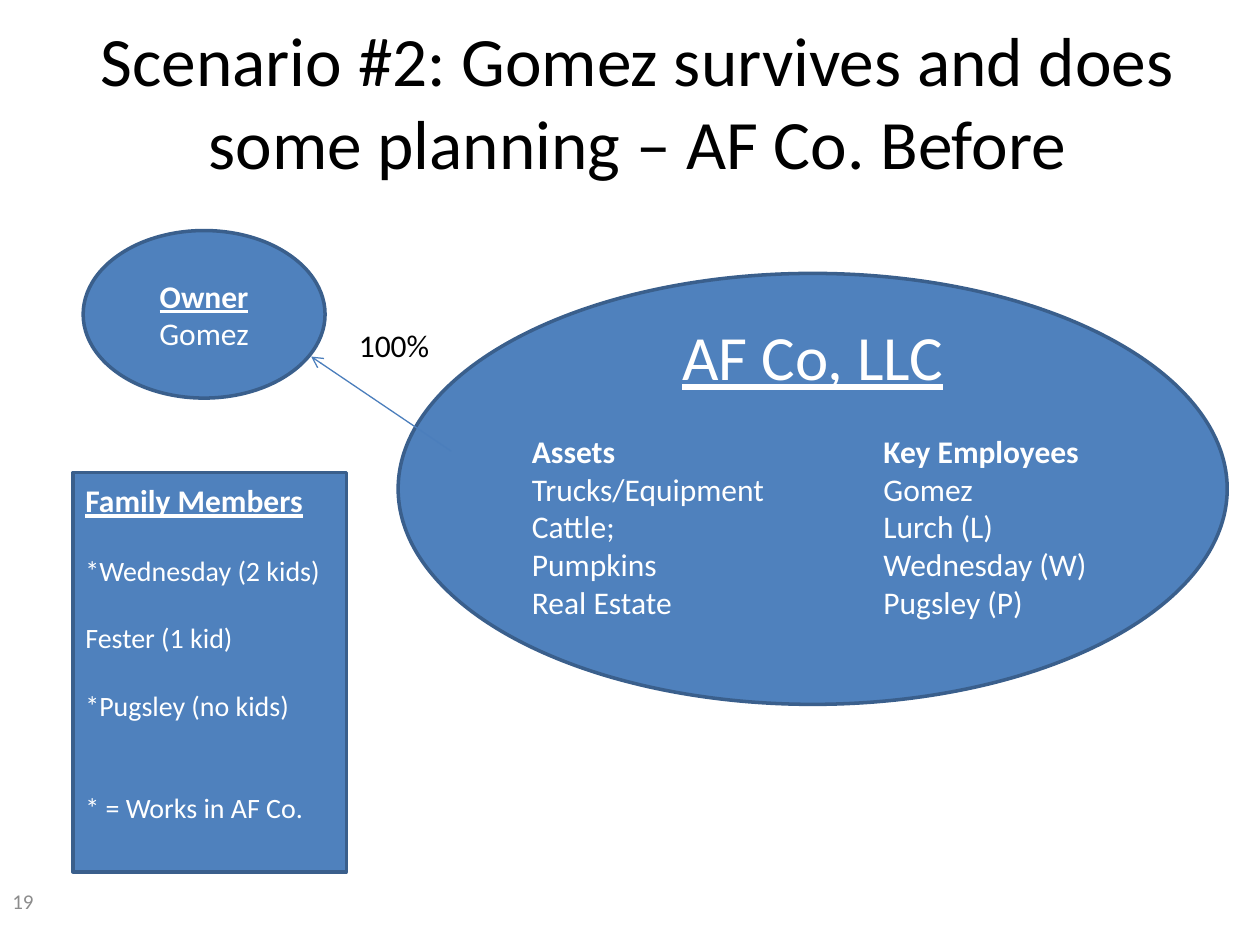
from lxml import etree
from pptx import Presentation
from pptx.dml.color import RGBColor
from pptx.enum.shapes import MSO_CONNECTOR, MSO_SHAPE
from pptx.enum.text import MSO_ANCHOR, MSO_AUTO_SIZE, PP_ALIGN
from pptx.oxml.ns import qn
from pptx.util import Inches, Pt

LEFT, CENTER = PP_ALIGN.LEFT, PP_ALIGN.CENTER
TOP, MIDDLE = MSO_ANCHOR.TOP, MSO_ANCHOR.MIDDLE
NO_FIT = MSO_AUTO_SIZE.NONE
OVAL, RECTANGLE = MSO_SHAPE.OVAL, MSO_SHAPE.RECTANGLE
STRAIGHT = MSO_CONNECTOR.STRAIGHT

WHITE = RGBColor(0xFF, 0xFF, 0xFF)
BLACK = RGBColor(0, 0, 0)
GRAY = RGBColor(0x8C, 0x8C, 0x8C)
BLUE = RGBColor(0x4F, 0x81, 0xBD)
OUTLINE = RGBColor(0x3A, 0x5F, 0x8C)
ARROW = RGBColor(0x4B, 0x7E, 0xBC)
FONT = "Calibri"


def add_text(tf, text, size=18, color=WHITE, bold=False, underline=False,
             align=LEFT, before=0, tab=None):
    p = tf.paragraphs[0]
    if p.runs:
        p = tf.add_paragraph()
    if tab is not None:
        tabs = etree.SubElement(p._p.get_or_add_pPr(), qn("a:tabLst"))
        etree.SubElement(tabs, qn("a:tab"), pos=str(tab), algn="l")
    p.alignment = align
    if before:
        p.space_before = Pt(before)
    r = p.add_run()
    r.text = text
    r.font.name = FONT
    r.font.size = Pt(size)
    r.font.bold = bold
    r.font.underline = underline
    r.font.color.rgb = color


def add_panel(s, kind, box, bottom=0.05):
    sp = s.shapes.add_shape(kind, *map(Inches, box))
    sp.shadow.inherit = False
    sp.fill.solid()
    sp.fill.fore_color.rgb = BLUE
    sp.line.color.rgb = OUTLINE
    sp.line.width = Pt(2)
    tf = sp.text_frame
    tf.word_wrap = True
    tf.vertical_anchor = MIDDLE
    tf.margin_bottom = Inches(bottom)
    return tf


def add_title(s, box):
    title = s.shapes.title
    title.left, title.top, title.width, title.height = map(Inches, box)
    tf = title.text_frame
    tf.auto_size = NO_FIT
    tf.vertical_anchor = MIDDLE
    add_text(tf, "Scenario #2: Gomez survives and does some planning – AF Co. Before",
             size=39.6, color=BLACK, align=CENTER)


def add_company(s, box):
    tf = add_panel(s, OVAL, box, bottom=0.36)
    add_text(tf, "AF Co, LLC", size=36, underline=True, align=CENTER)
    rows = [
        ("Assets", "Key Employees"),
        ("Trucks/Equipment", "Gomez"),
        ("Cattle;", "Lurch (L)"),
        ("Pumpkins", "Wednesday (W)"),
        ("Real Estate", "Pugsley (P)"),
    ]
    for i, row in enumerate(rows):
        add_text(tf, "\t".join(row), bold=i == 0, before=22 if i == 0 else 0,
                 tab=Inches(2.79))


def add_owner(s, box):
    tf = add_panel(s, OVAL, box)
    add_text(tf, "Owner", bold=True, underline=True, align=CENTER)
    add_text(tf, "Gomez", align=CENTER)


def add_family(s, box):
    tf = add_panel(s, RECTANGLE, box, bottom=0.36)
    add_text(tf, "Family Members", bold=True, underline=True)
    for member in ("*Wednesday (2 kids)", "Fester (1 kid)", "*Pugsley (no kids)"):
        add_text(tf, member, size=16, before=19.5)
    add_text(tf, "* = Works in AF Co.", size=16, before=39)


def add_ownership_arrow(s, start, end):
    line = s.shapes.add_connector(STRAIGHT, *map(Inches, start + end))
    line.line.color.rgb = ARROW
    line.line.width = Pt(0.75)
    etree.SubElement(line.line._get_or_add_ln(), qn("a:tailEnd"), type="arrow")
    etree.SubElement(line._element.spPr, qn("a:effectLst"))


def add_label(s, box, text, anchor=TOP, **text_format):
    tf = s.shapes.add_textbox(*map(Inches, box)).text_frame
    tf.word_wrap = True
    tf.vertical_anchor = anchor
    add_text(tf, text, **text_format)


def main():
    prs = Presentation()
    prs.slide_width, prs.slide_height = Inches(10), Inches(7.5)
    s = prs.slides.add_slide(prs.slide_layouts[5])
    add_title(s, (0.56, 0.17, 9, 1.25))
    add_company(s, (3.16, 2.17, 6.58, 3.42))
    add_owner(s, (0.66, 1.83, 1.92, 1.33))
    add_ownership_arrow(s, (3.58, 3.58), (2.47, 2.83))
    add_label(s, (2.75, 2.54, 1, 0.4), "100%", color=BLACK)
    add_family(s, (0.58, 3.75, 2.17, 3.17))
    add_label(s, (0, 6.95, 2.33, 0.4), "19", anchor=MIDDLE, size=12, color=GRAY)
    prs.save("out.pptx")


if __name__ == "__main__":
    main()
